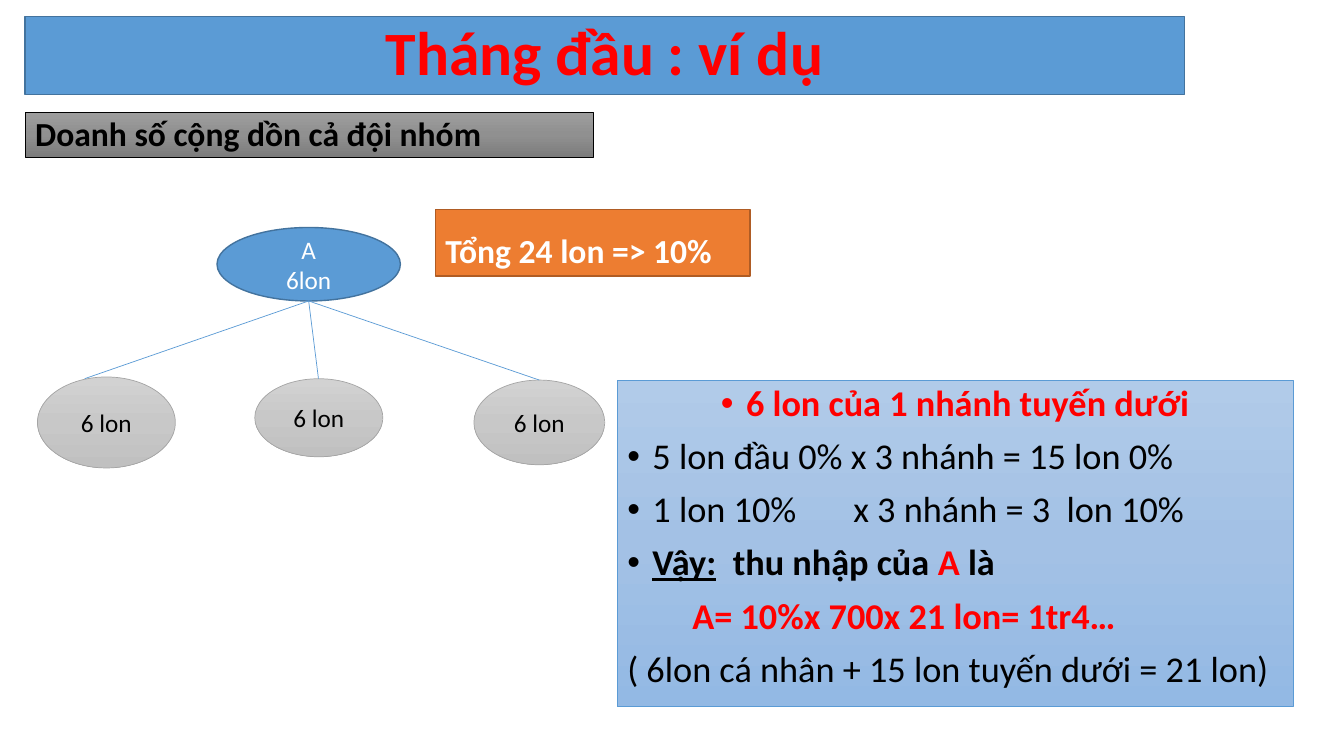
from copy import deepcopy

from pptx import Presentation
from pptx.dml.color import RGBColor
from pptx.enum.shapes import MSO_CONNECTOR, MSO_SHAPE
from pptx.enum.text import MSO_ANCHOR, PP_ALIGN
from pptx.oxml.ns import qn
from pptx.oxml.xmlchemy import OxmlElement
from pptx.util import Pt

# Content
RED, BLACK, WHITE, BLUE = "FF0000", "000000", "FFFFFF", "5B9BD5"
BOLD_RED = dict(color=RED, bold=True)
BOLD = dict(bold=True)

# Each paragraph: (runs, paragraph format); each run: (text, run format)
BULLET = dict(bullet=True)
INCOME = [
    ([("6 lon của 1 nhánh tuyến dưới", BOLD_RED)], dict(bullet=True, center=True)),
    ([("5 lon đầu 0% x 3 nhánh = 15 lon 0%", {})], BULLET),
    ([("1 lon 10%\tx 3 nhánh = 3  lon 10%", {})], dict(bullet=True, tab=161.5)),
    ([("Vậy:", dict(bold=True, underline=True)), ("  ", {}),
      ("thu nhập của ", BOLD), ("A ", BOLD_RED), ("là", BOLD)], BULLET),
    ([("A= 10%x 700x 21 lon= 1tr4…", BOLD_RED)], dict(indent=46.5)),
    ([("( 6lon cá nhân + 15 lon tuyến dưới = 21 lon)", {})], {}),
]

# Boxes: place, fill, line, line width, text format, paragraphs
BOXES = [
    ((18, 12, 828, 55.5), [BLUE], "43739E", 1,
     dict(size=44, anchor=MSO_ANCHOR.MIDDLE, spacing=0.9, before=0),
     [([("Tháng đầu : ví dụ", BOLD_RED)], dict(center=True))]),
    ((18, 80, 406, 32.5), ["9D9D9D", "909090", "7C7C7C"], BLACK, 0.5,
     dict(size=24, anchor=MSO_ANCHOR.BOTTOM, spacing=0.8, before=10),
     [([("Doanh số cộng dồn cả đội nhóm", BOLD)], {})]),
    ((311, 149.75, 224.75, 47.5), ["ED7D31"], "AF5C24", 1,
     dict(size=24, anchor=MSO_ANCHOR.BOTTOM, spacing=0.9, before=10),
     [([("Tổng 24 lon => 10%", dict(color=WHITE, bold=True))], {})]),
    ((441, 271.5, 482.75, 233.25), ["B1CBE9", "A3C1E5", "93B9E4"], BLUE, 0.5,
     dict(size=25.9, anchor=MSO_ANCHOR.TOP, spacing=0.9, before=10), INCOME),
]

LEADER = ((155, 162.5, 131, 52.5), ["A", "6lon"])
BRANCH_TEXT = "6 lon"
# Each branch: ellipse place, end point of its link
BRANCHES = [
    ((26.75, 269.25, 98.5, 65), (60.5, 270.5)),
    ((182, 270.5, 91.5, 55.75), (227.5, 270.5)),
    ((338.5, 271.5, 93.5, 60.5), (385.25, 271.5)),
]


def rgb(value):
    return RGBColor.from_string(value)


def set_fill(sp, colors):
    if len(colors) == 1:
        sp.fill.solid()
        sp.fill.fore_color.rgb = rgb(colors[0])
        return
    sp.fill.gradient()
    sp.fill.gradient_angle = 270
    stops = sp._element.spPr.find(".//" + qn("a:gsLst"))
    stops.insert(1, deepcopy(stops[0]))
    for i, (stop, color) in enumerate(zip(sp.fill.gradient_stops, colors)):
        stop.position = i / (len(colors) - 1)
        stop.color.rgb = rgb(color)


def format_paragraph(p, center=False, bullet=False, indent=0, tab=None):
    p.alignment = PP_ALIGN.CENTER if center else PP_ALIGN.LEFT
    pPr = p._p.get_or_add_pPr()
    pPr.set("marL", str(Pt(18 if bullet else indent)))
    pPr.set("indent", str(Pt(-18 if bullet else 0)))
    if bullet:
        font = OxmlElement("a:buFont")
        font.set("typeface", "Arial")
        mark = OxmlElement("a:buChar")
        mark.set("char", "•")
        pPr.extend([font, mark])
    if tab:
        tabs, stop = OxmlElement("a:tabLst"), OxmlElement("a:tab")
        stop.set("pos", str(Pt(tab)))
        stop.set("algn", "l")
        tabs.append(stop)
        pPr.append(tabs)


def write(tf, paragraphs, size, anchor, spacing, before, color=BLACK):
    tf.word_wrap = True
    tf.vertical_anchor = anchor
    for i, (runs, layout) in enumerate(paragraphs):
        p = tf.paragraphs[0] if i == 0 else tf.add_paragraph()
        p.line_spacing, p.space_before = spacing, Pt(before)
        format_paragraph(p, **layout)
        for text, style in runs:
            r = p.add_run()
            r.text = text
            values = dict(name="Calibri", size=Pt(size), bold=False) | style
            r.font.color.rgb = rgb(values.pop("color", color))
            for key, value in values.items():
                setattr(r.font, key, value)


def add_box(s, kind, place, colors, line, width, text_format, paragraphs):
    sp = s.shapes.add_shape(kind, *map(Pt, place))
    sp.shadow.inherit = False
    set_fill(sp, colors)
    sp.line.color.rgb = rgb(line)
    sp.line.width = Pt(width)
    write(sp.text_frame, paragraphs, **text_format)


def add_link(s, start, end):
    link = s.shapes.add_connector(MSO_CONNECTOR.STRAIGHT, *map(Pt, start + end))
    link.line.color.rgb = rgb(BLUE)
    link.line.width = Pt(0.5)
    link._element.spPr.append(OxmlElement("a:effectLst"))


def main():
    prs = Presentation()
    prs.slide_width, prs.slide_height = Pt(960), Pt(540)
    s = prs.slides.add_slide(prs.slide_layouts[6])

    # Title, heading, total and income boxes
    for box in BOXES:
        add_box(s, MSO_SHAPE.RECTANGLE, *box)

    # Team tree
    node = dict(size=18, anchor=MSO_ANCHOR.MIDDLE, spacing=1, before=0)
    centered = dict(center=True)
    place, lines = LEADER
    add_box(s, MSO_SHAPE.OVAL, place, [BLUE], "43739E", 1, node | dict(color=WHITE),
            [([(text, {})], centered) for text in lines])
    left, top, width, height = place
    start = (left + width / 2, top + height)
    for place, _ in BRANCHES:
        add_box(s, MSO_SHAPE.OVAL, place, ["D2D2D2", "C8C8C8", "C0C0C0"], "A5A5A5", 0.5,
                node, [([(BRANCH_TEXT, {})], centered)])
    for _, end in BRANCHES:
        add_link(s, start, end)

    prs.save("out.pptx")


if __name__ == "__main__":
    main()
